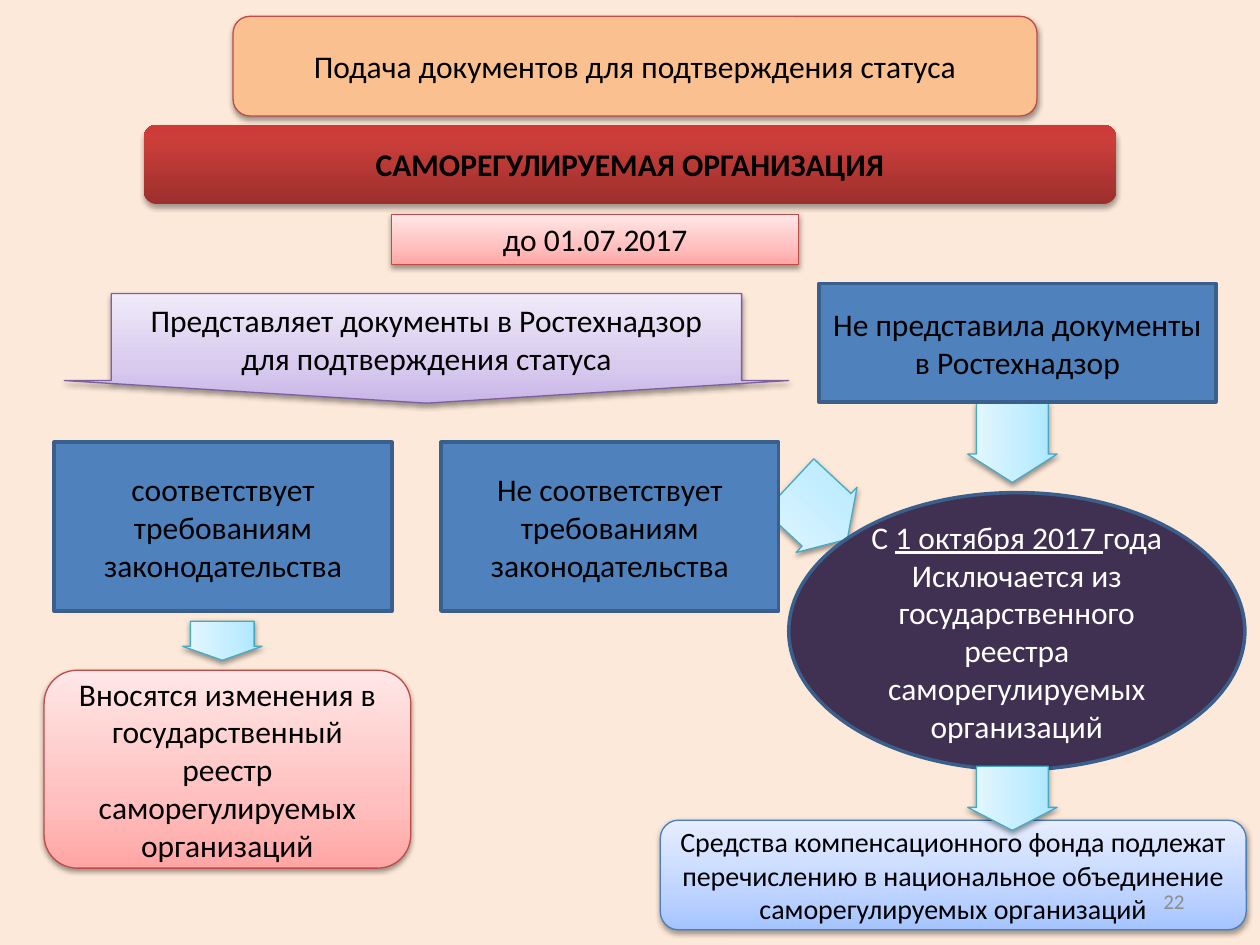
from copy import deepcopy
from lxml.etree import SubElement
from pptx import Presentation
from pptx.dml.color import RGBColor
from pptx.enum.shapes import MSO_SHAPE as Kind
from pptx.enum.text import MSO_ANCHOR as Anchor, MSO_AUTO_SIZE as AutoSize, PP_ALIGN as Align
from pptx.oxml.ns import qn
from pptx.util import Inches, Pt

COLUMNS, ROWS = 100, 75
BLACK, WHITE, GREY = "000000", "FFFFFF", "8C8C8C"

# Looks: fill (one colour or gradient stops), line, line width, shadow (opacity, distance)
SOFT = (38, 1.6)
LOOKS = {
    "title": ("FAC090", "BF4C48", 0.75, SOFT),
    "banner": ([(0, "9C2F2D"), (80, "CB3E3A"), (100, "CE3B37")], None, 0, (35, 1.8)),
    "pink": ([(0, "FFA6A5"), (35, "FFC0BF"), (100, "FFE7E7")], "BF4C48", 0.75, SOFT),
    "violet": ([(0, "C9B5E8"), (35, "D8CBEE"), (100, "F0EAF9")], "7D60A0", 0.75, SOFT),
    "pale blue": ([(0, "A4C4FF"), (35, "BFD4FF"), (100, "E6EEFF")], "4B7EBC", 0.75, SOFT),
    "arrow": ([(0, "A7E6FF"), (35, "C1EDFF"), (100, "E7F8FF")], "46AAC5", 0.75, SOFT),
    "blue": ("4F81BD", "3A5F8C", 2, None),
    "dark": ("403152", "3A5F8C", 2, None),
}

# Parts from back to front: kind, look, (left, top, width, height) in grid units, text or rotation
ROUND, STEP, ARROW = Kind.ROUNDED_RECTANGLE, Kind.FLOWCHART_PROCESS, Kind.RIGHT_ARROW
PARTS = [
    (ARROW, "arrow", (61.8, 37.1, 6.3, 7.1), 43),
    (ROUND, "banner", (11.4, 9.9, 77.2, 6.3), "САМОРЕГУЛИРУЕМАЯ ОРГАНИЗАЦИЯ"),
    (Kind.OVAL, "dark", (62.6, 39.1, 36.2, 22),
     "С |1 октября 2017 |года Исключается из государственного реестра саморегулируемых организаций"),
    (ARROW, "arrow", (77.2, 31.6, 6.3, 7.1), 90),
    (ROUND, "title", (18.5, 1.3, 63.8, 7.9), "Подача документов для подтверждения статуса"),
    (Kind.DOWN_ARROW, "violet", (5.1, 23.3, 57.5, 8.7),
     "Представляет документы в Ростехнадзор для подтверждения статуса"),
    (Kind.RECTANGLE, "pink", (31.1, 17, 32.3, 4), "до 01.07.2017"),
    (ROUND, "pale blue", (52.4, 65.1, 46.5, 8.7),
     "Средства компенсационного фонда подлежат перечислению в национальное объединение "
     "саморегулируемых организаций"),
    (STEP, "blue", (4.3, 35.1, 26.8, 13.4), "соответствует требованиям законодательства"),
    (STEP, "blue", (35, 35.1, 26.8, 13.4), "Не соответствует требованиям законодательства"),
    (STEP, "blue", (65, 22.5, 31.5, 9.4), "Не представила документы в Ростехнадзор"),
    (ROUND, "pink", (3.5, 53.2, 29.1, 15.7),
     "Вносятся изменения в государственный реестр саморегулируемых организаций"),
    (ARROW, "arrow", (16.1, 47.7, 3.1, 6.3), 90),
    (None, None, (71.7, 69.5, 23.3, 4), "22"),
    (ARROW, "arrow", (77.8, 59.8, 5.1, 7.1), 90),
]
ADJUSTMENTS = {ARROW: (0.802, 0.358), Kind.DOWN_ARROW: (0.87, 0.206)}


def color(value):
    return RGBColor.from_string(value)


def decorate(box, fill, line, width, shadow):
    if isinstance(fill, str):
        box.fill.solid()
        box.fill.fore_color.rgb = color(fill)
    else:
        box.fill.gradient()
        box.fill.gradient_angle = 90
        stops = box.element.spPr.find(".//" + qn("a:gsLst"))
        stops.append(deepcopy(stops[0]))
        for stop, (position, value) in zip(box.fill.gradient_stops, fill):
            stop.position = position / 100
            stop.color.rgb = color(value)
    if line:
        box.line.color.rgb = color(line)
        box.line.width = Pt(width)
    else:
        box.line.fill.background()
    box.shadow.inherit = False
    if shadow:
        opacity, distance = shadow
        effects = box.element.spPr.find(qn("a:effectLst"))
        outer = SubElement(effects, qn("a:outerShdw"), blurRad=str(Pt(3.1)),
                           dist=str(Pt(distance)), dir="5400000", rotWithShape="0")
        shade = SubElement(outer, qn("a:srgbClr"), val=BLACK)
        SubElement(shade, qn("a:alpha"), val=str(opacity * 1000))


# Slide and background
deck = Presentation()
deck.slide_width, deck.slide_height = Inches(10), Inches(7.5)
column, row = deck.slide_width / COLUMNS, deck.slide_height / ROWS
page = deck.slides.add_slide(deck.slide_layouts[6])
page.background.fill.solid()
page.background.fill.fore_color.rgb = color("FDE9D9")

for kind, look, (left, top, width, height), content in PARTS:
    place = [round(v) for v in (left * column, top * row, width * column, height * row)]

    # Shape, or plain text box for the page number
    if kind is None:
        box = page.shapes.add_textbox(*place)
    else:
        box = page.shapes.add_shape(kind, *place)
        decorate(box, *LOOKS[look])
        for index, value in enumerate(ADJUSTMENTS.get(kind, ())):
            box.adjustments[index] = value

    # Block arrows are turned and carry no text
    if kind == ARROW:
        box.rotation = content
        box.element.spPr.find(qn("a:xfrm")).set("flipV", "1")
        continue

    # Text; the bars enclose an underlined part
    frame = box.text_frame
    frame.word_wrap = True
    frame.vertical_anchor = Anchor.MIDDLE
    if kind == Kind.RECTANGLE:
        frame.vertical_anchor = Anchor.TOP
        frame.auto_size = AutoSize.SHAPE_TO_FIT_TEXT
    para = frame.paragraphs[0]
    para.alignment = Align.CENTER if kind else Align.RIGHT
    size = {None: 12, "pale blue": 16}.get(look, 18)
    for index, words in enumerate(content.split("|")):
        span = para.add_run()
        span.text = words
        style = {"name": "Calibri", "size": Pt(size), "bold": look == "banner",
                 "underline": index == 1}
        for key, value in style.items():
            setattr(span.font, key, value)
        span.font.color.rgb = color({None: GREY, "dark": WHITE}.get(look, BLACK))

deck.save("out.pptx")
